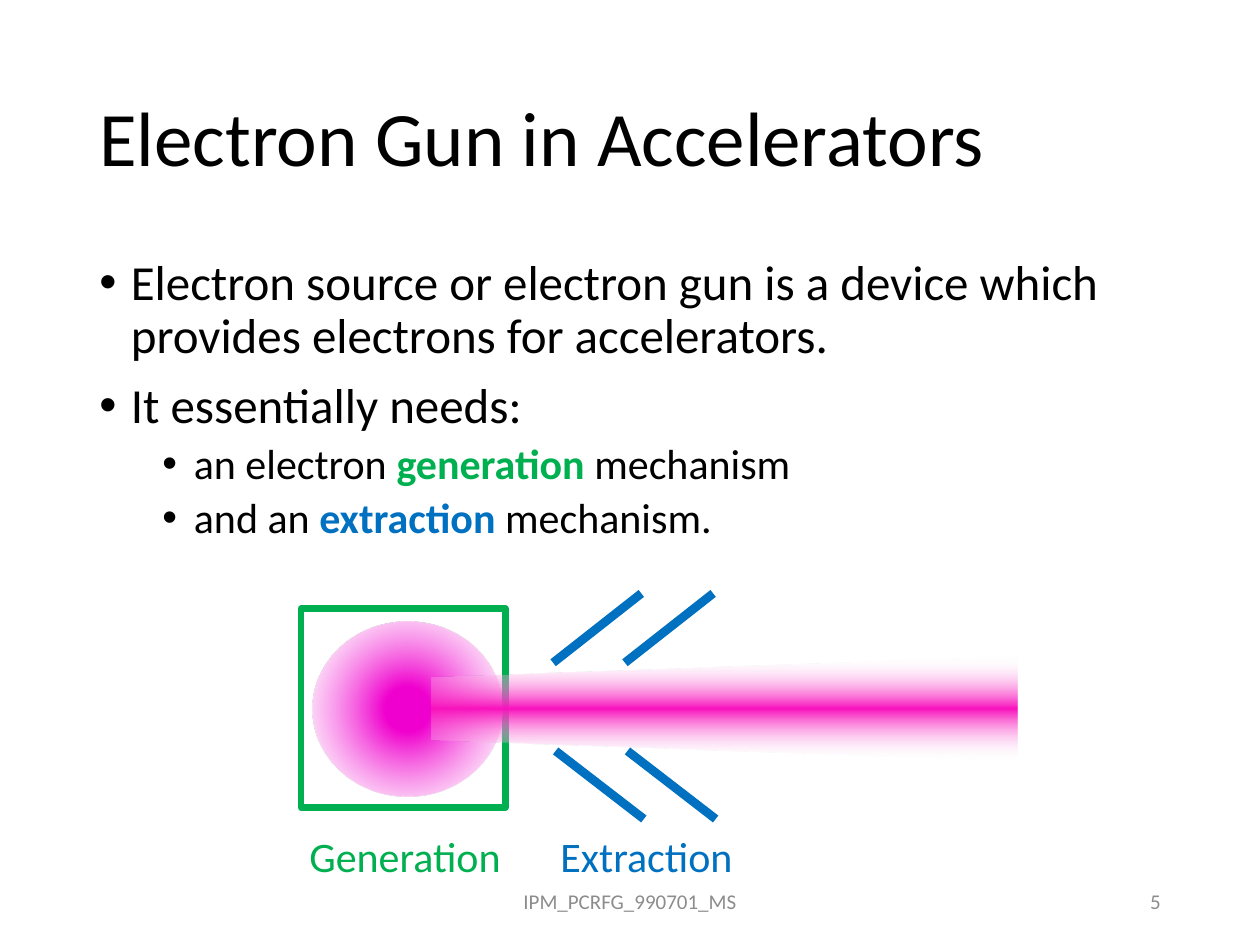
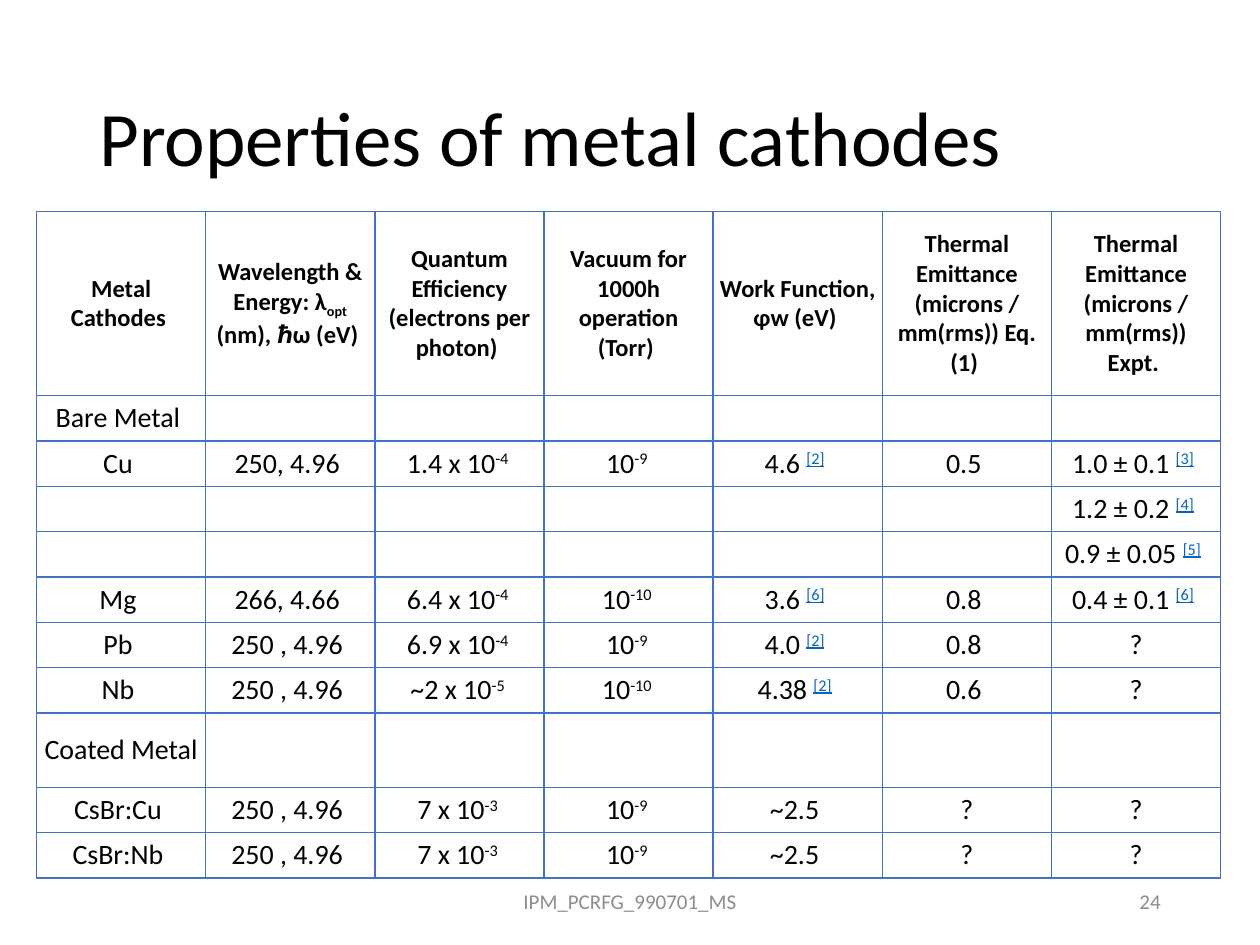
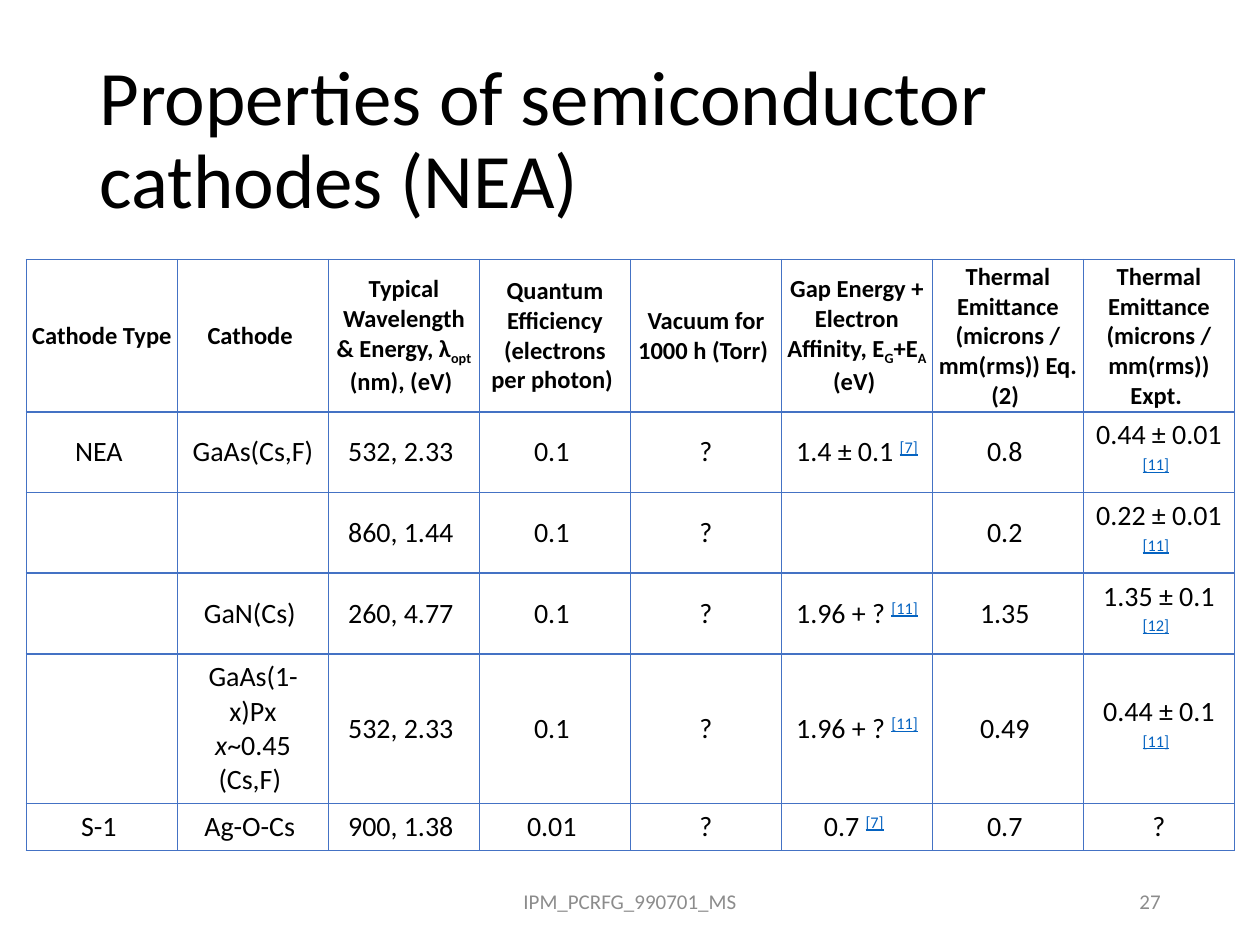
from dataclasses import dataclass

from lxml.etree import SubElement
from pptx import Presentation
from pptx.dml.color import RGBColor
from pptx.enum.shapes import MSO_CONNECTOR as Connector, MSO_SHAPE as Preset
from pptx.enum.text import MSO_ANCHOR as Anchor, PP_ALIGN as Align
from pptx.oxml import parse_xml
from pptx.oxml.ns import nsdecls, qn
from pptx.util import Inches, Pt

FONT = "Calibri"
BLACK, GREY, LINK_BLUE, GRID_BLUE = "000000", "8C8C8C", "0563C1", "4472C4"
GREEN, BLUE, WHITE, PLASMA, BEAM = "00B050", "0070C0", "FFFFFF", "F000CE", "F913BD"
FOOTER = "IPM_PCRFG_990701_MS"


@dataclass(frozen=True)
class Box:
    """A frame in inches."""
    left: float
    top: float
    width: float
    height: float

    def lengths(self) -> tuple:
        """Return the frame as lengths."""
        return tuple(Inches(v) for v in (self.left, self.top, self.width, self.height))


@dataclass(frozen=True)
class RunStyle:
    """What a marked run changes in its paragraph's font."""
    baseline: int = 0
    color: str = ""
    bold: bool = False
    italic: bool = False
    underline: bool = False


@dataclass(frozen=True)
class TextStyle:
    """Font and layout of a paragraph."""
    size: float
    color: str = BLACK
    bold: bool = False
    align: Align = Align.LEFT
    line_spacing: float = 1.0


@dataclass(frozen=True)
class Bullet:
    """A bulleted line with its level, size and space before."""
    text: str
    level: int
    size: float
    before: float


@dataclass(frozen=True)
class GridLayout:
    """Frame, row heights and cell margins of a table."""
    left: float
    top: float
    width: float
    row_heights: list[float]
    header_margins: tuple[float, float]
    body_margins: tuple[float, float]


MARKS = {
    "^": RunStyle(baseline=30),
    "_": RunStyle(baseline=-25),
    "@": RunStyle(baseline=30, color=LINK_BLUE, underline=True),
    "/": RunStyle(italic=True),
    "<": RunStyle(color=GREEN, bold=True),
    ">": RunStyle(color=BLUE, bold=True),
}
TITLE = TextStyle(44, line_spacing=0.9)
HEADER_CELL = TextStyle(14, bold=True, align=Align.CENTER)
BODY_CELL = TextStyle(16, align=Align.CENTER)

BULLETS = [
    Bullet("Electron source or electron gun is a device which provides electrons for accelerators.", 0, 28, 0),
    Bullet("It essentially needs:", 0, 28, 10),
    Bullet("an electron |<generation| mechanism", 1, 24, 5),
    Bullet("and an |>extraction| mechanism.", 1, 24, 5),
]

METAL_LAYOUT = GridLayout(0.29, 1.68, 9.4, [1.46] + [0.36] * 7 + [0.59] + [0.36] * 2,
                          (0.05, 0.02), (0.05, 0.02))
METAL_ROWS = [
    ["Metal Cathodes", "Wavelength & Energy: λ|_opt| (nm), ℏω (eV)",
     "Quantum Efficiency (electrons per photon)", "Vacuum for 1000h operation (Torr)",
     "Work Function, φw (eV)", "Thermal Emittance (microns / mm(rms)) Eq. (1)",
     "Thermal Emittance (microns / mm(rms)) Expt."],
    ["Bare Metal", "", "", "", "", "", ""],
    ["Cu", "250, 4.96", "1.4 x 10|^-4", "10|^-9", "4.6 |@[2]|", "0.5", "1.0 ± 0.1 |@[3]|"],
    ["", "", "", "", "", "", "1.2 ± 0.2 |@[4]|"],
    ["", "", "", "", "", "", "0.9 ± 0.05 |@[5]|"],
    ["Mg", "266, 4.66", "6.4 x 10|^-4", "10|^-10", "3.6 |@[6]|", "0.8", "0.4 ± 0.1 |@[6]|"],
    ["Pb", "250 , 4.96", "6.9 x 10|^-4", "10|^-9", "4.0 |@[2]|", "0.8", " ?"],
    ["Nb", "250 , 4.96", "~2 x 10|^-5", "10|^-10", "4.38 |@[2]|", "0.6", " ?"],
    ["Coated Metal", "", "", "", "", "", ""],
    ["CsBr:Cu", "250 , 4.96", "7 x 10|^-3", "10|^-9", "~2.5", " ?", " ?"],
    ["CsBr:Nb", "250 , 4.96", "7 x 10|^-3", "10|^-9", "~2.5", " ?", " ?"],
]

NEA_LAYOUT = GridLayout(0.21, 2.06, 9.59, [1.21, 0.64, 0.64, 0.64, 1.19, 0.37],
                        (0.04, 0.02), (0.1, 0.05))
NEA_ROWS = [
    ["Cathode Type", "Cathode", "Typical Wavelength & Energy, λ|_opt| (nm), (eV)",
     "Quantum Efficiency (electrons per photon)", "Vacuum for 1000 h (Torr)",
     "Gap Energy + Electron Affinity, E|_G|+E|_A| (eV)",
     "Thermal Emittance (microns / mm(rms)) Eq. (2)",
     "Thermal Emittance (microns / mm(rms)) Expt."],
    ["NEA", "GaAs(Cs,F)", "532, 2.33", "0.1", " ?", "1.4 ± 0.1 |@[7]|", "0.8", "0.44 ± 0.01 |@[11]|"],
    ["", "", "860, 1.44", "0.1", " ?", "", "0.2", "0.22 ± 0.01 |@[11]|"],
    ["", "GaN(Cs)", "260, 4.77", "0.1", " ?", "1.96 + ? |@[11]|", "1.35", "1.35 ± 0.1 |@[12]|"],
    ["", "GaAs(1-x)Px |/x|~0.45 (Cs,F)", "532, 2.33", "0.1", " ?", "1.96 + ? |@[11]|", "0.49",
     "0.44 ± 0.1 |@[11]|"],
    ["S-1", "Ag-O-Cs", "900, 1.38", "0.01", " ?", "0.7 |@[7]|", "0.7", " ?"],
]


def rgb(code: str) -> RGBColor:
    """Turn a hex string into a colour."""
    return RGBColor.from_string(code)


def write(paragraph, text: str, style: TextStyle) -> None:
    """Style a paragraph and add its runs, split at bars and marked by their first sign."""
    paragraph.alignment = style.align
    paragraph.line_spacing = style.line_spacing
    font = paragraph.font
    font.name, font.size, font.bold = FONT, Pt(style.size), style.bold
    font.color.rgb = rgb(style.color)
    for part in filter(None, text.split("|")):
        mark = MARKS.get(part[0])
        run = paragraph.add_run()
        run.text = part[1:] if mark else part
        if not mark:
            continue
        if mark.baseline:
            run._r.get_or_add_rPr().set("baseline", str(mark.baseline * 1000))
        if mark.color:
            run.font.color.rgb = rgb(mark.color)
        if mark.bold:
            run.font.bold = True
        if mark.italic:
            run.font.italic = True
        if mark.underline:
            run.font.underline = True


def add_frame(shapes, box: Box, anchor: Anchor = Anchor.TOP):
    """Add a wrapping text box and return its text frame."""
    frame = shapes.add_textbox(*box.lengths()).text_frame
    frame.word_wrap = True
    frame.vertical_anchor = anchor
    return frame


def add_text(shapes, box: Box, text: str, style: TextStyle, anchor: Anchor = Anchor.TOP) -> None:
    """Add a text box of one paragraph."""
    write(add_frame(shapes, box, anchor).paragraphs[0], text, style)


def add_page(deck, title: str, number: int):
    """Add a slide with its title, footer and number and return its shapes."""
    shapes = deck.slides.add_slide(deck.slide_layouts[6]).shapes
    add_text(shapes, Box(0.69, 0.4, 8.62, 1.45), title, TITLE, Anchor.MIDDLE)
    add_text(shapes, Box(3.31, 6.95, 3.38, 0.4), FOOTER,
             TextStyle(12, GREY, align=Align.CENTER), Anchor.MIDDLE)
    add_text(shapes, Box(7.06, 6.95, 2.25, 0.4), str(number),
             TextStyle(12, GREY, align=Align.RIGHT), Anchor.MIDDLE)
    return shapes


def add_bullets(shapes, box: Box, bullets: list[Bullet]) -> None:
    """Add a bulleted list."""
    frame = add_frame(shapes, box)
    for index, bullet in enumerate(bullets):
        paragraph = frame.add_paragraph() if index else frame.paragraphs[0]
        paragraph.level = bullet.level
        properties = paragraph._p.get_or_add_pPr()
        properties.set("marL", str(Inches(0.25 + 0.5 * bullet.level)))
        properties.set("indent", str(Inches(-0.25)))
        SubElement(properties, qn("a:buFont")).set("typeface", "Arial")
        SubElement(properties, qn("a:buChar")).set("char", "•")
        paragraph.space_before = Pt(bullet.before)
        write(paragraph, bullet.text, TextStyle(bullet.size, line_spacing=0.9))


def add_outline(shapes, preset: Preset, box: Box):
    """Add a preset shape without shadow, fill or line."""
    shape = shapes.add_shape(preset, *box.lengths())
    shape.shadow.inherit = False
    shape.fill.background()
    shape.line.fill.background()
    return shape


def fill_gradient(shape, stops: list[tuple[int, str, int]], direction: str) -> None:
    """Fill a shape with stops of position, colour and opacity in percent."""
    stop_list = "".join(
        f'<a:gs pos="{position * 1000}"><a:srgbClr val="{code}">'
        f'<a:alpha val="{opacity * 1000}"/></a:srgbClr></a:gs>'
        for position, code, opacity in stops)
    gradient = parse_xml(f'<a:gradFill {nsdecls("a")} rotWithShape="1">'
                         f'<a:gsLst>{stop_list}</a:gsLst>{direction}</a:gradFill>')
    properties = shape._element.spPr
    properties.replace(properties.find(qn("a:noFill")), gradient)


def add_electrode(shapes, start: tuple[float, float], end: tuple[float, float]) -> None:
    """Add a thick extraction electrode."""
    electrode = shapes.add_connector(Connector.STRAIGHT, *(Inches(v) for v in start + end))
    electrode.line.color.rgb = rgb(BLUE)
    electrode.line.width = Pt(5)
    SubElement(electrode._element.spPr, qn("a:effectLst"))


def add_grid(shapes, layout: GridLayout, rows: list[list[str]]) -> None:
    """Add a ruled table with equal columns and a bold header row."""
    box = Box(layout.left, layout.top, layout.width, sum(layout.row_heights))
    table = shapes.add_table(len(rows), len(rows[0]), *box.lengths()).table
    table.first_row = table.horz_banding = False
    for column in table.columns:
        column.width = Inches(layout.width / len(rows[0]))
    for index, texts in enumerate(rows):
        table.rows[index].height = Inches(layout.row_heights[index])
        side, edge = layout.body_margins if index else layout.header_margins
        for cell, text in zip(table.rows[index].cells, texts):
            cell.margin_left = cell.margin_right = Inches(side)
            cell.margin_top = cell.margin_bottom = Inches(edge)
            cell.vertical_anchor = Anchor.MIDDLE
            cell.fill.background()
            rule_cell(cell)
            write(cell.text_frame.paragraphs[0], f"{text} " if text else "",
                  BODY_CELL if index else HEADER_CELL)


def rule_cell(cell) -> None:
    """Draw the four borders of a cell."""
    properties = cell._tc.get_or_add_tcPr()
    for position, tag in enumerate(("lnL", "lnR", "lnT", "lnB")):
        properties.insert(position, parse_xml(
            f'<a:{tag} {nsdecls("a")} w="{Pt(1)}"><a:solidFill>'
            f'<a:srgbClr val="{GRID_BLUE}"/></a:solidFill></a:{tag}>'))


def draw_gun(shapes) -> None:
    """Draw the generation chamber, the extraction electrodes and the beam."""
    extraction = shapes.add_group_shape().shapes
    add_text(extraction, Box(4.35, 6.54, 1.63, 0.5), "Extraction", TextStyle(24, BLUE))
    for x in (4.39, 4.96):
        add_electrode(extraction, (x, 5.26), (x + 0.7, 4.71))
        add_electrode(extraction, (x + 0.02, 5.96), (x + 0.72, 6.5))

    generation = shapes.add_group_shape().shapes
    add_text(generation, Box(2.28, 6.54, 1.87, 0.5), "Generation",
             TextStyle(24, GREEN, align=Align.CENTER))
    chamber = add_outline(generation, Preset.RECTANGLE, Box(2.39, 4.83, 1.62, 1.58))
    chamber.line.color.rgb = rgb(GREEN)
    chamber.line.width = Pt(3.75)
    cloud = add_outline(generation, Preset.OVAL, Box(2.48, 4.93, 1.51, 1.39))
    fill_gradient(cloud, [(17, PLASMA, 100), (91, WHITE, 65)],
                  '<a:path path="circle"><a:fillToRect l="50000" t="50000" r="50000" b="50000"/></a:path>')

    beam = add_outline(shapes, Preset.FLOWCHART_MANUAL_OPERATION, Box(5.34, 3.3, 0.82, 4.65))
    beam.rotation = 90
    fill_gradient(beam, [(0, WHITE, 0), (50, BEAM, 100), (100, WHITE, 0)],
                  '<a:lin ang="0" scaled="0"/>')


def main() -> None:
    """Build the three slides and save them."""
    deck = Presentation()
    deck.slide_width, deck.slide_height = Inches(10), Inches(7.5)

    gun_page = add_page(deck, "Electron Gun in Accelerators", 5)
    add_bullets(gun_page, Box(0.69, 2, 8.62, 4.76), BULLETS)
    draw_gun(gun_page)

    add_grid(add_page(deck, "Properties of metal cathodes", 24), METAL_LAYOUT, METAL_ROWS)
    add_grid(add_page(deck, "Properties of semiconductor cathodes (NEA)", 27), NEA_LAYOUT, NEA_ROWS)
    deck.save("out.pptx")


if __name__ == "__main__":
    main()
